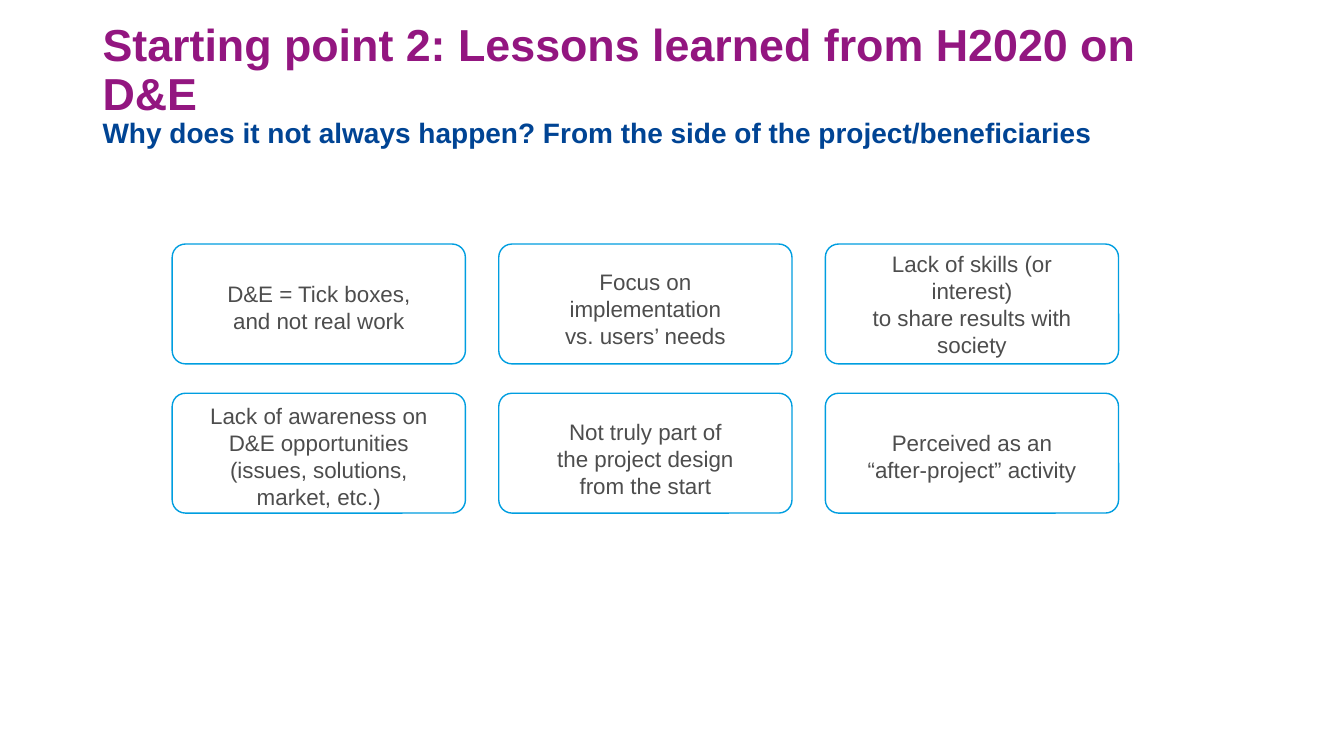
import lxml.etree
import pptx
import pptx.dml.color
import pptx.enum.shapes
import pptx.enum.text
import pptx.oxml.ns
import pptx.util

Cm = pptx.util.Cm
Pt = pptx.util.Pt

COLORS = {
    "heading": "931680",
    "question": "004494",
    "outline": "009EE0",
    "card": "FFFFFF",
    "reason": "4D4D4D",
}
FONT = "Arial"

HEADING = "Starting point 2: Lessons learned from H2020 on D&E"
QUESTION = "Why does it not always happen? From the side of the project/beneficiaries"

# paragraphs, text width, offset below the card top, text height
REASONS = [
    (["D&E = Tick boxes, and not real work"], 5.64, 0.79, 1.63),
    (["Focus on implementation", "vs. users’ needs"], 5.64, 0.48, 2.31),
    (["Lack of skills (or interest)", "to share results with society"], 6.12, 0.03, 3),
    (["Lack of awareness on D&E opportunities (issues, solutions, market, etc.)"], 6.48, 0.1, 3),
    (["Not truly part of the project design from the start"], 5.26, 0.51, 2.31),
    (["Perceived as an “after-project” activity"], 6.12, 0.79, 1.63),
]

COLUMNS = 3
GRID_LEFT, GRID_TOP = 4.34, 6.15
CARD_WIDTH, CARD_HEIGHT = 7.39, 3.02
COLUMN_STEP, ROW_STEP = 8.23, 3.76


def color(name):
    return pptx.dml.color.RGBColor.from_string(COLORS[name])


def add_run(paragraph, words, size, color_name, bold=False):
    run = paragraph.add_run()
    run.text = words
    run.font.name = FONT
    run.font.size = Pt(size)
    run.font.bold = bold
    run.font.color.rgb = color(color_name)


def add_heading(slide):
    heading = slide.shapes.title
    heading.left, heading.top = Cm(2.33), Cm(1.35)
    heading.width, heading.height = Cm(29.21), Cm(2.43)
    frame = heading.text_frame
    frame.word_wrap = True
    frame.auto_size = pptx.enum.text.MSO_AUTO_SIZE.NONE
    frame.vertical_anchor = pptx.enum.text.MSO_ANCHOR.BOTTOM
    frame.margin_bottom = 0
    paragraph = frame.paragraphs[0]
    paragraph.alignment = pptx.enum.text.PP_ALIGN.LEFT
    paragraph.line_spacing = 0.9
    add_run(paragraph, HEADING, 32, "heading", True)
    paragraph.add_line_break()
    line_break = paragraph._p.find(pptx.oxml.ns.qn("a:br"))
    lxml.etree.SubElement(line_break, pptx.oxml.ns.qn("a:rPr"), sz="3200")
    add_run(paragraph, QUESTION, 20, "question", True)


def add_card(slide, left, top):
    card = slide.shapes.add_shape(
        pptx.enum.shapes.MSO_SHAPE.ROUNDED_RECTANGLE,
        Cm(left), Cm(top), Cm(CARD_WIDTH), Cm(CARD_HEIGHT))
    card.adjustments[0] = 0.11
    card.shadow.inherit = False
    card.fill.solid()
    card.fill.fore_color.rgb = color("card")
    card.line.color.rgb = color("outline")
    card.line.width = Pt(1)


def add_reason(slide, paragraphs, left, top, width, height):
    reason = slide.shapes.add_textbox(Cm(left), Cm(top), Cm(width), Cm(height))
    frame = reason.text_frame
    frame.word_wrap = True
    frame.auto_size = pptx.enum.text.MSO_AUTO_SIZE.SHAPE_TO_FIT_TEXT
    for index, words in enumerate(paragraphs):
        paragraph = frame.add_paragraph() if index else frame.paragraphs[0]
        paragraph.alignment = pptx.enum.text.PP_ALIGN.CENTER
        add_run(paragraph, words, 16, "reason")


def main():
    deck = pptx.Presentation()
    deck.slide_width, deck.slide_height = Cm(33.87), Cm(19.05)
    slide = deck.slides.add_slide(deck.slide_layouts.get_by_name("Title Only"))
    add_heading(slide)
    for index, (paragraphs, width, offset, height) in enumerate(REASONS):
        row, column = divmod(index, COLUMNS)
        left = GRID_LEFT + column * COLUMN_STEP
        top = GRID_TOP + row * ROW_STEP
        add_card(slide, left, top)
        add_reason(slide, paragraphs, left + (CARD_WIDTH - width) / 2,
                   top + offset, width, height)
    deck.save("out.pptx")


if __name__ == "__main__":
    main()
